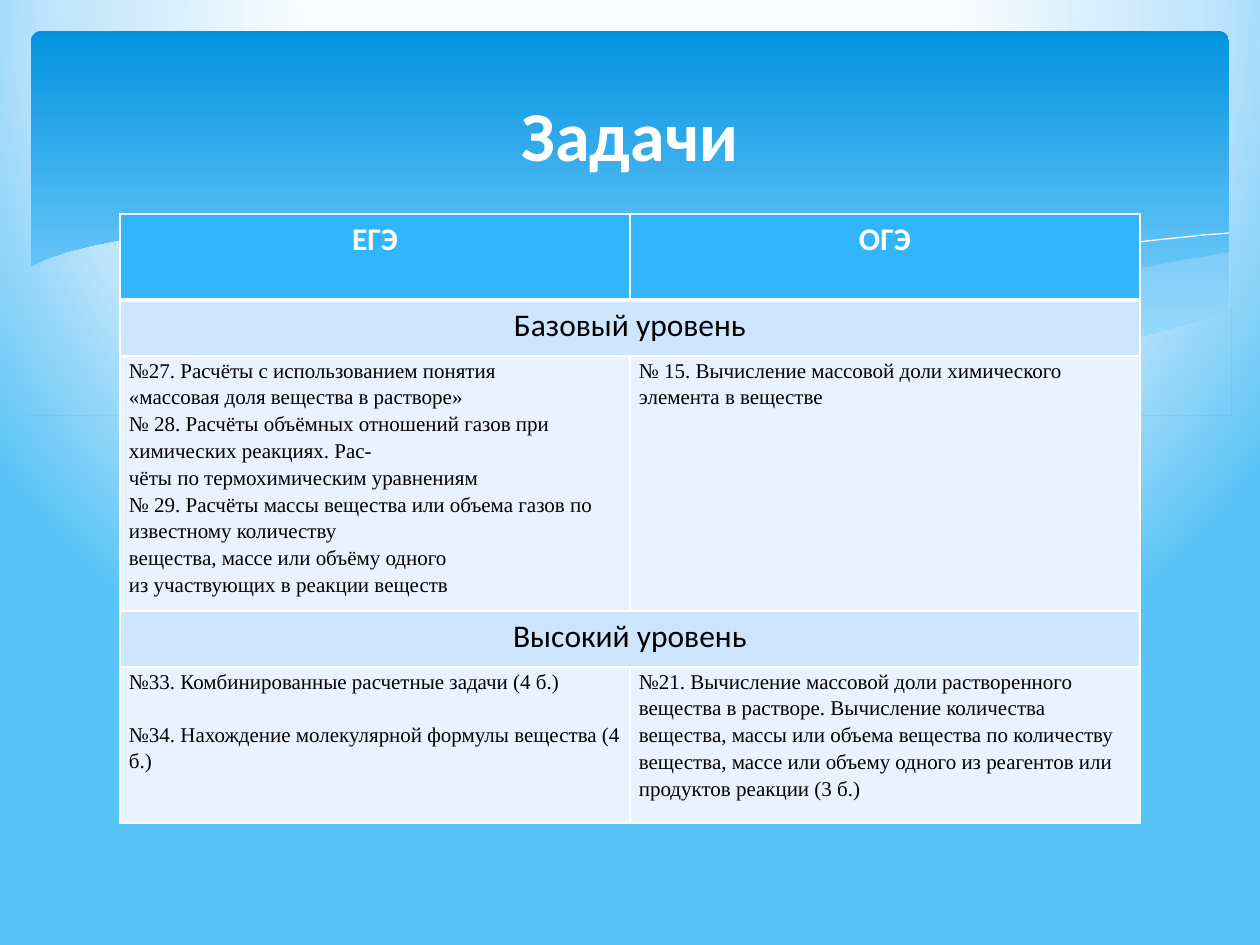
"""Builds the slide "Задачи": a table of exam tasks on a wavy blue backdrop."""
from itertools import chain
from lxml.etree import SubElement
from pptx import Presentation
from pptx.dml.color import RGBColor
from pptx.enum.shapes import MSO_SHAPE as Preset
from pptx.enum.text import MSO_ANCHOR as Anchor, PP_ALIGN as Align
from pptx.oxml.ns import qn
from pptx.util import Pt

TITLE = "Задачи"
HEADER = ["ЕГЭ", "ОГЭ"]
SECTIONS = [
    {"level": "Базовый уровень", "gap": 0, "tasks": [
        ["№27. Расчёты с использованием понятия",
         "«массовая доля вещества в растворе»",
         "№ 28. Расчёты объёмных отношений газов при химических реакциях. Рас-",
         "чёты по термохимическим уравнениям",
         "№ 29. Расчёты массы вещества или объема газов по известному количеству",
         "вещества, массе или объёму одного",
         "из участвующих в реакции веществ"],
        ["№ 15. Вычисление массовой доли химического элемента в веществе"]]},
    {"level": "Высокий уровень", "gap": 15, "tasks": [
        ["№33. Комбинированные расчетные задачи (4 б.)",
         "№34. Нахождение молекулярной формулы вещества (4 б.)"],
        ["№21. Вычисление массовой доли растворенного вещества в растворе. "
         "Вычисление количества вещества, массы или объема вещества по количеству "
         "вещества, массе или объему одного из реагентов или продуктов реакции (3 б.)"]]},
]

COLORS = {"white": "FFFFFF", "black": "000000", "header": "31B6FD",
          "level": "CEE5FE", "body": "E8F3FF", "wave": "C6E7FC",
          "sky light": "FAFDFE", "sky middle": "BEE4FC", "sky deep": "58C3F6",
          "panel top": "0293E0", "panel bottom": "83D3FE"}
SKY = {40: "sky light", 74: "sky middle", 100: "sky deep"}
PANEL = {0: "panel top", 90: "panel bottom"}

VEILS = [
    {"opacity": 29, "edges": [
        [(1230, 252), (1123, 272), (1014, 299), (833, 334)],
        [(833, 334), (938, 347), (1040, 350), (1130, 340), (1230, 311)]]},
    {"opacity": 40, "edges": [
        [(1125, 344), (1017, 328), (890, 302), (793, 280), (682, 255),
         (586, 241), (503, 234), (433, 234), (360, 241)],
        [(360, 241), (456, 256), (566, 280), (668, 302), (757, 321),
         (876, 340), (974, 349), (1040, 350), (1125, 344)]]},
]
CRESTS = [
    [(389, 246), (457, 238), (567, 237), (672, 244), (801, 262), (958, 294), (1143, 343)],
    [(772, 324), (876, 296), (1016, 265), (1128, 244), (1229, 233)],
]
FRONT_EDGE = [(1231, 310), (1133, 339), (1037, 348), (915, 343), (816, 330), (699, 309),
              (563, 277), (460, 254), (368, 240), (290, 233), (203, 232), (120, 241),
              (66, 253), (29, 268)]
FRONT_BOTTOM = 415

SCALE = 914400 / 126
SLIDE_WIDTH, SLIDE_HEIGHT = 1260, 945
MARGIN = 31
CURVE_STEPS = 6
TABLE_TOP, COLUMN_WIDTH = 214, 510
HEADER_HEIGHT, LEVEL_HEIGHT, BODY_HEIGHTS = 86, 56, [255, 156]


def px(value):
    return round(value * SCALE)


def rgb(name):
    return RGBColor.from_string(COLORS[name])


def smooth_curve(knots):
    """Return points on a Catmull-Rom spline through the knots."""
    padded = [knots[0], *knots, knots[-1]]
    points = [knots[0]]
    for before, start, end, after in zip(padded, padded[1:], padded[2:], padded[3:]):
        for step in range(1, CURVE_STEPS + 1):
            t = step / CURVE_STEPS
            points.append(tuple(
                b + ((c - a) * t + (2 * a - 5 * b + 4 * c - d) * t ** 2
                     + (3 * b - a - 3 * c + d) * t ** 3) / 2
                for a, b, c, d in zip(before, start, end, after)))
    return points


def set_gradient(fill, element, stops, radial=False):
    fill.gradient()
    gradient = element.find(".//" + qn("a:gradFill"))
    for child in list(gradient):
        gradient.remove(child)
    stop_list = SubElement(gradient, qn("a:gsLst"))
    for position, name in stops.items():
        stop = SubElement(stop_list, qn("a:gs"), pos=str(position * 1000))
        SubElement(stop, qn("a:srgbClr"), val=COLORS[name])
    if radial:
        circle = SubElement(gradient, qn("a:path"))
        circle.set("path", "circle")
        SubElement(circle, qn("a:fillToRect"), l="20000", t="-40000", r="20000", b="140000")
    else:
        SubElement(gradient, qn("a:lin"), ang="5400000", scaled="0")


def add_outline(shapes, points, close=True):
    builder = shapes.build_freeform(*points[0], scale=SCALE)
    builder.add_line_segments(points[1:], close=close)
    shape = builder.convert_to_shape()
    shape.shadow.inherit = False
    shape.line.fill.background()
    return shape


def add_veil(shapes, edges, opacity):
    shape = add_outline(shapes, list(chain.from_iterable(map(smooth_curve, edges))))
    shape.fill.solid()
    shape.fill.fore_color.rgb = rgb("wave")
    color = shape._element.find(".//" + qn("a:srgbClr"))
    SubElement(color, qn("a:alpha"), val=str(opacity * 1000))


def add_crest(shapes, knots):
    shape = add_outline(shapes, smooth_curve(knots), close=False)
    shape.fill.background()
    shape.line.color.rgb = rgb("white")
    shape.line.width = Pt(0)


def add_front_wave(shapes):
    right, left = FRONT_EDGE[0][0], FRONT_EDGE[-1][0]
    corners = [(left, FRONT_BOTTOM), (right, FRONT_BOTTOM)]
    element = add_outline(shapes, smooth_curve(FRONT_EDGE) + corners)._element
    element.set("useBgFill", "1")
    element.remove(element.find(qn("p:style")))


def add_backdrop(slide):
    set_gradient(slide.background.fill, slide._element, SKY, radial=True)
    panel = slide.shapes.add_shape(Preset.ROUNDED_RECTANGLE, px(MARGIN), px(MARGIN),
                                   px(SLIDE_WIDTH - 2 * MARGIN), px(340))
    panel.adjustments[0] = 0.03
    panel.shadow.inherit = False
    panel.line.fill.background()
    set_gradient(panel.fill, panel._element, PANEL)
    waves = slide.shapes.add_group_shape().shapes
    for veil in VEILS:
        add_veil(waves, **veil)
    for knots in CRESTS:
        add_crest(waves, knots)
    add_front_wave(waves)


def write(paragraph, text, size, font, color, bold=False):
    run = paragraph.add_run()
    run.text = text
    run.font.size, run.font.name, run.font.bold = Pt(size), font, bold
    run.font.color.rgb = rgb(color)


def write_heading(frame, text, size, color, bold=False):
    paragraph = frame.paragraphs[0]
    paragraph.alignment = Align.CENTER
    write(paragraph, text, size, "Calibri", color, bold)


def write_body(cell, lines, gap):
    cell.margin_left = cell.margin_right = px(9)
    cell.margin_top = cell.margin_bottom = 0
    frame = cell.text_frame
    for index, line in enumerate(lines):
        paragraph = frame.add_paragraph() if index else frame.paragraphs[0]
        paragraph.line_spacing = 1.15
        paragraph.space_before = Pt(gap if index else 0)
        write(paragraph, line, 12, "Times New Roman", "black")


def style_cell(cell, fill, bottom=1):
    properties = cell._tc.get_or_add_tcPr()
    for side, width in {"L": 1, "R": 1, "T": 1, "B": bottom}.items():
        border = SubElement(properties, qn("a:ln" + side), w=str(Pt(width)))
        SubElement(SubElement(border, qn("a:solidFill")), qn("a:srgbClr"), val=COLORS["white"])
    cell.fill.solid()
    cell.fill.fore_color.rgb = rgb(fill)


def add_task_table(slide):
    heights = [HEADER_HEIGHT]
    for body_height in BODY_HEIGHTS:
        heights += [LEVEL_HEIGHT, body_height]
    width = COLUMN_WIDTH * len(HEADER)
    table = slide.shapes.add_table(len(heights), len(HEADER), px((SLIDE_WIDTH - width) / 2),
                                   px(TABLE_TOP), px(width), px(sum(heights))).table
    for row, height in zip(table.rows, heights):
        row.height = px(height)
    for column, text in enumerate(HEADER):
        style_cell(table.cell(0, column), "header", bottom=3)
        write_heading(table.cell(0, column).text_frame, text, 18, "white", bold=True)
    for level_row, section in zip(range(1, len(heights), 2), SECTIONS):
        level = table.cell(level_row, 0)
        level.merge(table.cell(level_row, len(HEADER) - 1))
        write_heading(level.text_frame, section["level"], 18, "black")
        for column, lines in enumerate(section["tasks"]):
            body = table.cell(level_row + 1, column)
            style_cell(table.cell(level_row, column), "level")
            style_cell(body, "body")
            write_body(body, lines, section["gap"])


def add_title(slide):
    title = slide.shapes.title
    title.left, title.top, title.width, title.height = map(px, (63, 47, 1134, 173))
    title.text_frame.vertical_anchor = Anchor.MIDDLE
    write_heading(title.text_frame, TITLE, 40, "white", bold=True)
    slide.shapes._spTree.append(title._element)


presentation = Presentation()
presentation.slide_width, presentation.slide_height = px(SLIDE_WIDTH), px(SLIDE_HEIGHT)
slide = presentation.slides.add_slide(presentation.slide_layouts[5])
add_backdrop(slide)
add_task_table(slide)
add_title(slide)
presentation.save("out.pptx")
